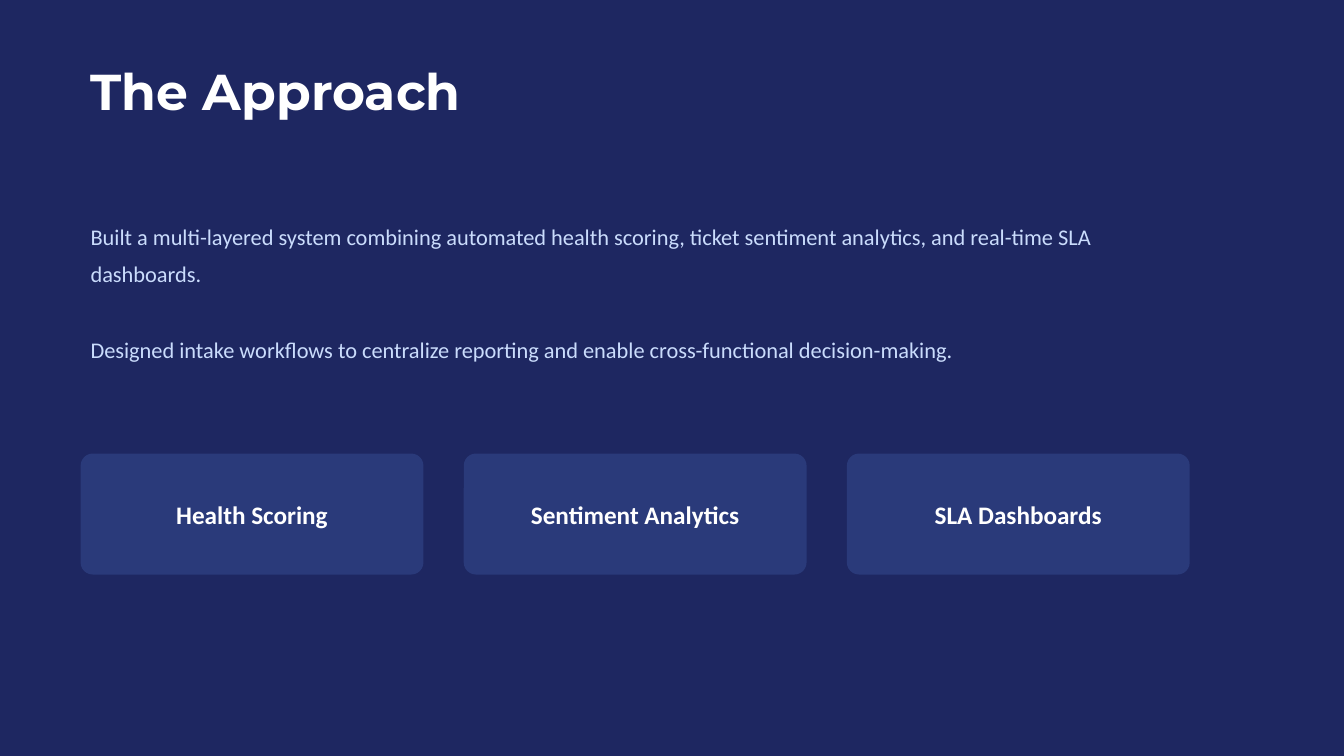
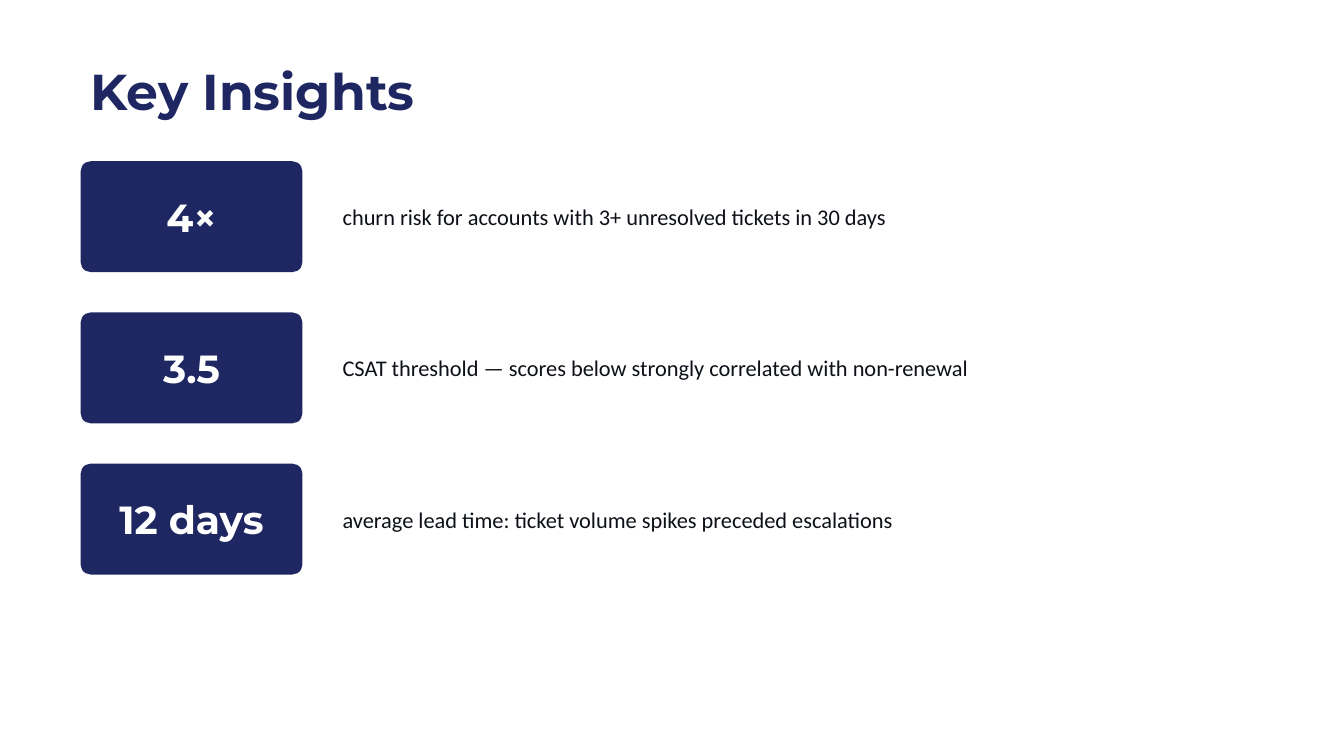
from pptx import Presentation
from pptx.dml.color import RGBColor
from pptx.enum.shapes import MSO_SHAPE
from pptx.enum.text import MSO_ANCHOR, MSO_AUTO_SIZE, PP_ALIGN
from pptx.util import Inches, Pt

ROUNDED = MSO_SHAPE.ROUNDED_RECTANGLE
MIDDLE = MSO_ANCHOR.MIDDLE
LEFT, CENTER = PP_ALIGN.LEFT, PP_ALIGN.CENTER
NO_FIT = MSO_AUTO_SIZE.NONE
TITLE_ONLY = 5

COLORS = {
    "navy": "1E2761",
    "card": "2A3A7A",
    "ice": "CADCFC",
    "ink": "0D1117",
    "white": "FFFFFF",
}
HEADING, BODY = "Montserrat", "Calibri"
MARGIN = 0.8
GAP = 0.4

APPROACH = [
    "Built a multi-layered system combining automated health scoring, "
    "ticket sentiment analytics, and real-time SLA dashboards.",
    "Designed intake workflows to centralize reporting and enable "
    "cross-functional decision-making.",
]
PILLARS = ["Health Scoring", "Sentiment Analytics", "SLA Dashboards"]
INSIGHTS = [
    ("4×", "churn risk for accounts with 3+ unresolved tickets in 30 days"),
    ("3.5", "CSAT threshold — scores below strongly correlated with non-renewal"),
    ("12 days", "average lead time: ticket volume spikes preceded escalations"),
]


def color(name):
    return RGBColor.from_string(COLORS[name])


def write(shape, paragraphs, font, size, ink, bold=False, align=LEFT,
          line_spacing=None, gap=0):
    """Fill a shape with vertically centred paragraphs, gap points apart."""
    frame = shape.text_frame
    frame.word_wrap = True
    frame.auto_size = NO_FIT
    frame.vertical_anchor = MIDDLE
    for i, text in enumerate(paragraphs):
        paragraph = frame.add_paragraph() if i else frame.paragraphs[0]
        paragraph.alignment = align
        if line_spacing:
            paragraph.line_spacing = line_spacing
        if i and gap:
            paragraph.space_before = Pt(gap)
        run = paragraph.add_run()
        run.text = text
        run.font.name, run.font.size, run.font.bold = font, Pt(size), bold
        run.font.color.rgb = color(ink)


def add_titled_slide(prs, title, background, ink):
    slide = prs.slides.add_slide(prs.slide_layouts[TITLE_ONLY])
    slide.background.fill.solid()
    slide.background.fill.fore_color.rgb = color(background)
    heading = slide.shapes.title
    heading.left, heading.top = Inches(MARGIN), Inches(0.5)
    heading.width, heading.height = Inches(8), Inches(0.8)
    write(heading, [title], HEADING, 36, ink, bold=True)
    return slide


def add_text(slide, box, paragraphs, ink, **style):
    area = slide.shapes.add_textbox(*map(Inches, box))
    write(area, paragraphs, BODY, 16, ink, **style)


def add_card(slide, box, label, fill, radius, font, size):
    card = slide.shapes.add_shape(ROUNDED, *map(Inches, box))
    card.adjustments[0] = radius / box[3]
    card.shadow.inherit = False
    card.fill.solid()
    card.fill.fore_color.rgb = color(fill)
    card.line.fill.background()
    write(card, [label], font, size, "white", bold=True, align=CENTER)


def build_approach(prs):
    slide = add_titled_slide(prs, "The Approach", "navy", "white")
    add_text(slide, (MARGIN, 1.6, 11, 2.5), APPROACH, "ice",
             line_spacing=1.4, gap=27)
    width, height = 3.4, 1.2
    for column, label in enumerate(PILLARS):
        left = MARGIN + column * (width + GAP)
        add_card(slide, (left, 4.5, width, height), label, "card", 0.12, BODY, 18)


def build_insights(prs):
    slide = add_titled_slide(prs, "Key Insights", "white", "navy")
    width, height, text_height = 2.2, 1.1, 0.8
    for row, (figure, meaning) in enumerate(INSIGHTS):
        top = 1.6 + row * (height + GAP)
        add_card(slide, (MARGIN, top, width, height), figure, "navy", 0.1,
                 HEADING, 28)
        text_top = top + (height - text_height) / 2
        add_text(slide, (3.3, text_top, 9, text_height), [meaning], "ink")


def main():
    prs = Presentation()
    prs.slide_width, prs.slide_height = Inches(13.33), Inches(7.5)
    build_approach(prs)
    build_insights(prs)
    prs.save("out.pptx")


if __name__ == "__main__":
    main()
